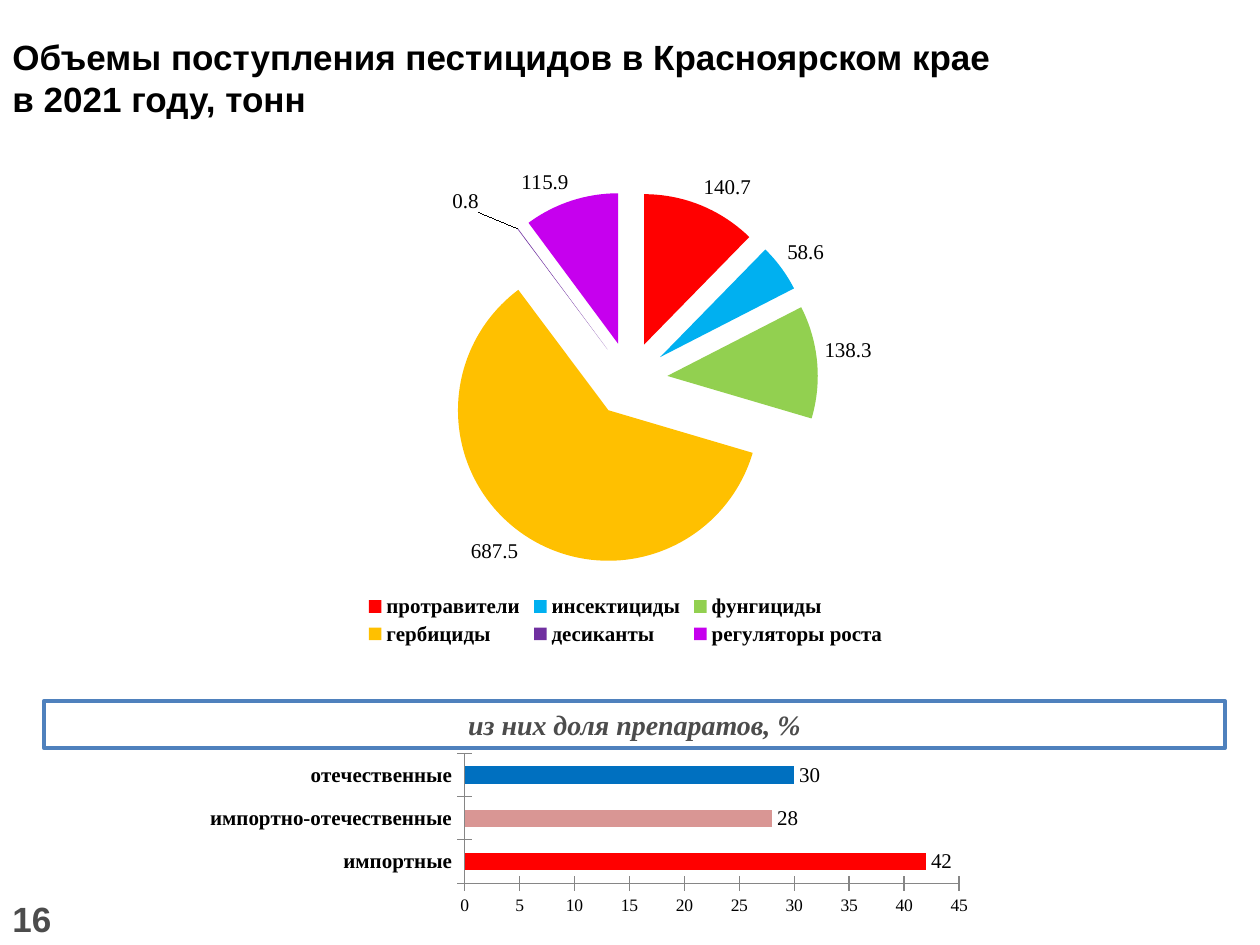
"""Build a slide on pesticide supplies with a pie chart and a bar chart."""
from lxml.etree import SubElement
from pptx import Presentation
from pptx.chart.data import CategoryChartData
from pptx.dml.color import RGBColor
from pptx.enum.chart import XL_CHART_TYPE as ChartType
from pptx.enum.chart import XL_LABEL_POSITION as LabelPosition
from pptx.enum.chart import XL_LEGEND_POSITION as LegendPosition
from pptx.enum.chart import XL_TICK_MARK as TickMark
from pptx.enum.shapes import MSO_SHAPE as Shape
from pptx.enum.text import MSO_ANCHOR as Anchor
from pptx.enum.text import PP_ALIGN as Align
from pptx.oxml.ns import qn
from pptx.util import Pt

SANS, SERIF = "Arial", "Times New Roman"
BLACK, GREY, BLUE, AXIS = "000000", "4C4C4C", "4F81BD", "868686"

TITLE = "Объемы поступления пестицидов в Красноярском крае в 2021 году, тонн"
SUBTITLE = "из них доля препаратов, %"
PAGE_NUMBER = "16"
VOLUMES = [
    ("протравители", 140.7, "FF0000"),
    ("инсектициды", 58.6, "00B0F0"),
    ("фунгициды", 138.3, "92D050"),
    ("гербициды", 687.5, "FFC000"),
    ("десиканты", 0.8, "7030A0"),
    ("регуляторы роста", 115.9, "C600EE"),
]
SHARES = [
    ("импортные", 42, "FF0000"),
    ("импортно-отечественные", 28, "D99694"),
    ("отечественные", 30, "0070C0"),
]
THIN_SLICE = 4


def color(value):
    return RGBColor.from_string(value)


def set_font(font, size, name=SERIF, tint=BLACK, bold=False, italic=False):
    font.size, font.name = Pt(size), name
    font.bold, font.italic = bold, italic
    font.color.rgb = color(tint)


def write(shape, text, size, name, tint, italic=False, align=Align.LEFT):
    frame = shape.text_frame
    frame.text = text
    frame.word_wrap = True
    frame.vertical_anchor = Anchor.MIDDLE
    para = frame.paragraphs[0]
    para.alignment = align
    set_font(para.runs[0].font, size, name, tint, True, italic)


def add_text(page, place, text, size, name, tint):
    box = page.shapes.add_textbox(*map(Pt, place))
    write(box, text, size, name, tint)


def add_chart(page, kind, place, rows, number_format):
    data = CategoryChartData(number_format=number_format)
    data.categories = [name for name, _, _ in rows]
    data.add_series("Series 1", [value for _, value, _ in rows])
    chart = page.shapes.add_chart(kind, *map(Pt, place), data).chart
    chart.has_title = chart.has_legend = False
    set_font(chart.font, 10, SANS)
    series = chart.plots[0].series[0]
    for index, (_, _, tint) in enumerate(rows):
        fill = series.points[index].format.fill
        fill.solid()
        fill.fore_color.rgb = color(tint)
    labels = series.data_labels
    labels.show_value = True
    labels.position = LabelPosition.OUTSIDE_END
    labels.number_format = number_format
    labels.number_format_is_linked = False
    set_font(labels.font, 12)
    return chart, series


def set_layout(parent, position, **values):
    for old in parent.findall(qn("c:layout")):
        parent.remove(old)
    layout = SubElement(parent, qn("c:layout"))
    manual = SubElement(layout, qn("c:manualLayout"))
    for tag, value in values.items():
        SubElement(manual, qn("c:" + tag)).set("val", str(value))
    parent.insert(position, layout)


def add_pie(page):
    chart, series = add_chart(page, ChartType.PIE, (111, 77, 493, 294.5), VOLUMES, "0.0")
    chart.has_legend = True
    chart.legend.position = LegendPosition.BOTTOM
    chart.legend.include_in_layout = False
    set_font(chart.legend.font, 12, bold=True)

    slices = series._element
    explosion = SubElement(slices, qn("c:explosion"))
    explosion.set("val", "25")
    slices.find(qn("c:dPt")).addprevious(explosion)

    plot_area = chart._chartSpace.find(".//" + qn("c:plotArea"))
    set_layout(plot_area, 0, layoutTarget="inner", xMode="edge", yMode="edge",
               x=0.01, y=0.11, w=0.99, h=0.73)

    label = series.points[THIN_SLICE].data_label
    set_font(label.font, 12)
    label.position = LabelPosition.OUTSIDE_END
    set_layout(slices.find(".//" + qn("c:dLbl")), 1, x=-0.04, y=-0.02)


def add_bars(page):
    chart, _ = add_chart(page, ChartType.BAR_CLUSTERED, (111, 428.5, 451, 96.5), SHARES, "General")
    chart.plots[0].gap_width = 150
    chart.plots[0].vary_by_categories = False
    for axis, size, bold in ((chart.category_axis, 12, True), (chart.value_axis, 10, False)):
        axis.has_major_gridlines = False
        axis.major_tick_mark = TickMark.CROSS
        axis.minor_tick_mark = TickMark.NONE
        axis.format.line.color.rgb = color(AXIS)
        set_font(axis.tick_labels.font, size, bold=bold)
    chart.value_axis.minimum_scale = 0
    chart.value_axis.maximum_scale = 45
    chart.value_axis.major_unit = 5


def add_banner(page):
    banner = page.shapes.add_shape(Shape.RECTANGLE, Pt(25), Pt(400.5), Pt(675), Pt(27))
    banner.shadow.inherit = False
    banner.fill.solid()
    banner.fill.fore_color.rgb = color("FFFFFF")
    banner.line.color.rgb = color(BLUE)
    banner.line.width = Pt(2)
    write(banner, SUBTITLE, 16, SERIF, GREY, True, Align.CENTER)


def main():
    deck = Presentation()
    deck.slide_width, deck.slide_height = Pt(720), Pt(540)
    page = deck.slides.add_slide(deck.slide_layouts[6])
    add_banner(page)
    add_text(page, (0, 15, 577, 59), TITLE, 20, SANS, BLACK)
    add_pie(page)
    add_bars(page)
    add_text(page, (0, 516, 42.5, 17.5), PAGE_NUMBER, 20, SANS, GREY)
    deck.save("out.pptx")


if __name__ == "__main__":
    main()
